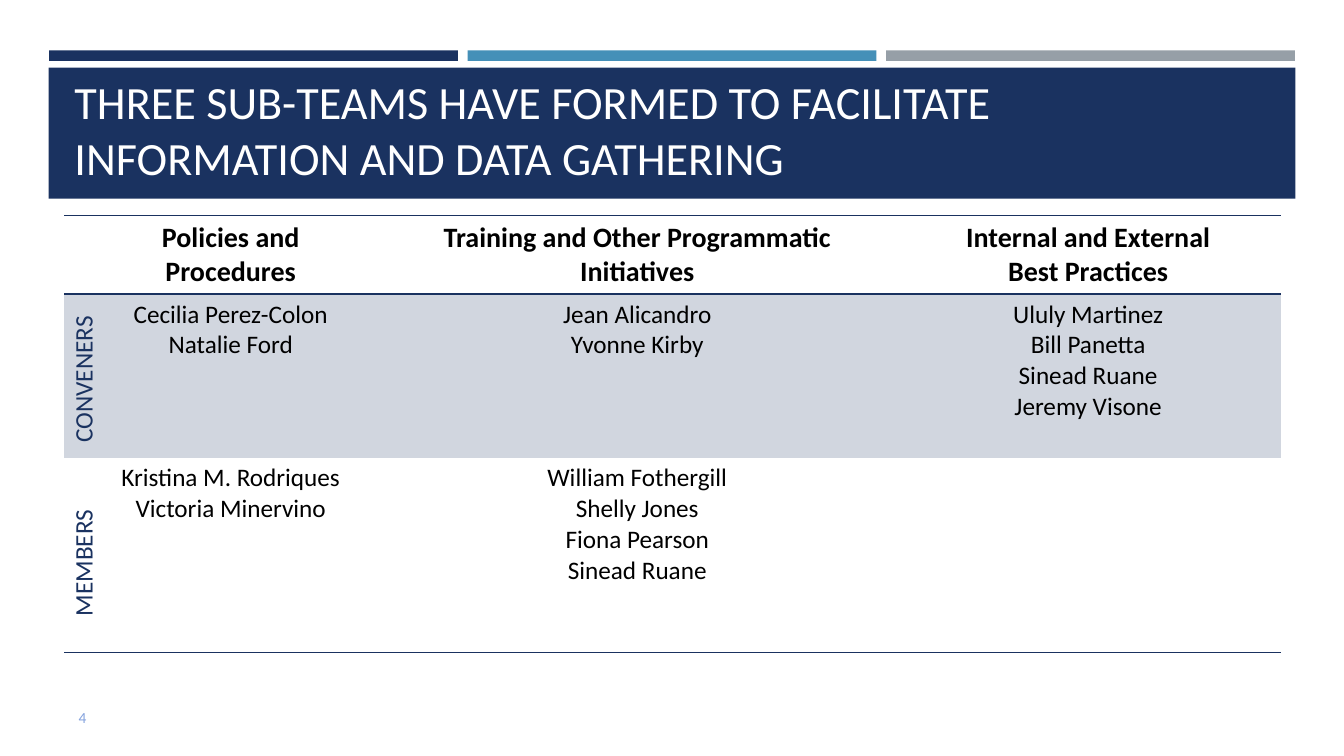
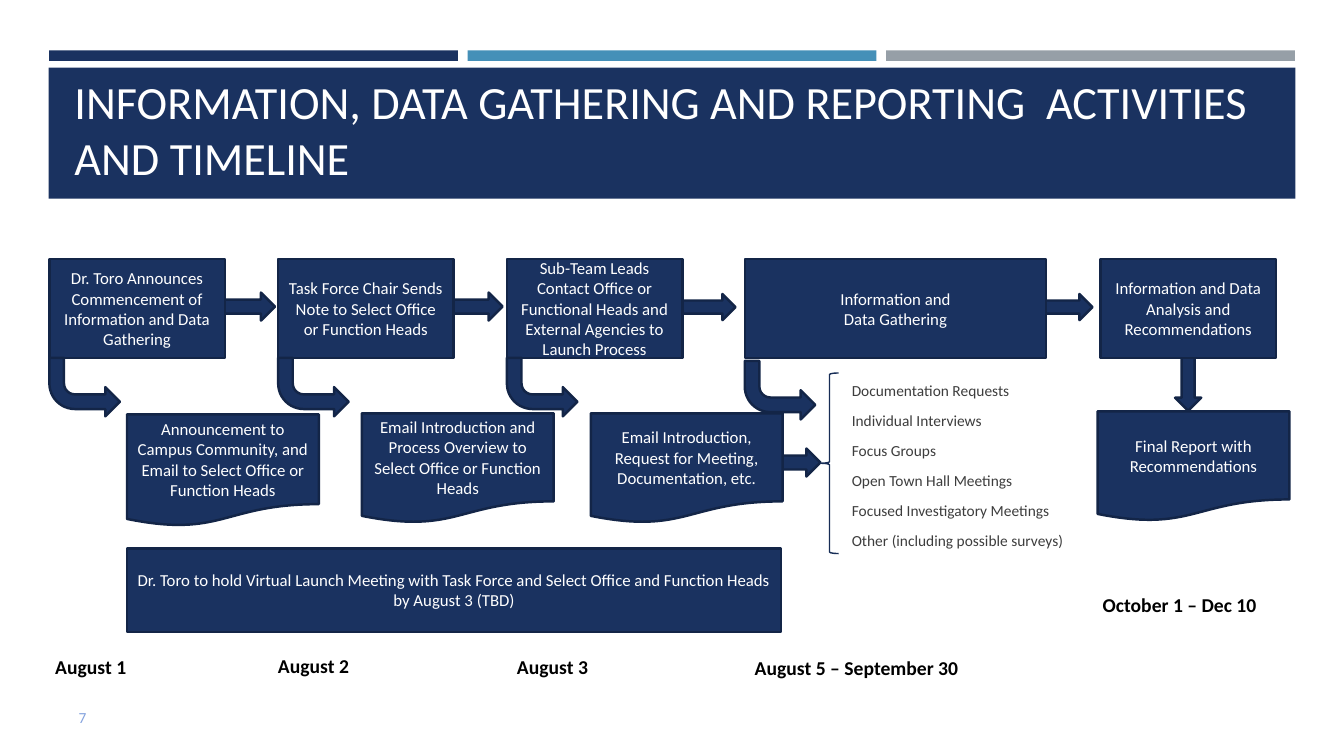
"""Build two task force slides: the sub-team table and the activity timeline."""
from dataclasses import dataclass

from lxml.etree import SubElement
from pptx import Presentation
from pptx.dml.color import RGBColor as RGB
from pptx.enum.shapes import MSO_SHAPE as SHAPE
from pptx.enum.text import MSO_ANCHOR as ANCHOR, MSO_AUTO_SIZE as FIT, PP_ALIGN as ALIGN
from pptx.oxml.ns import qn
from pptx.util import Pt


@dataclass(frozen=True)
class Theme:
    font: str = "Calibri"
    navy: str = "1A3260"
    edge: str = "132547"
    brace: str = "172D56"
    blue: str = "4590B8"
    gray: str = "969FA7"
    tint: str = "D1D6DF"
    number: str = "85A3DE"
    body: str = "3D3D3D"
    black: str = "000000"
    white: str = "FFFFFF"
    title_size: float = 33
    head_size: float = 20
    cell_size: float = 18
    date_size: float = 14
    box_size: float = 12
    small_size: float = 11


T = Theme()


def write(tf, lines, size, color, bold=False, align=ALIGN.LEFT, anchor=ANCHOR.TOP):
    tf.word_wrap = True
    tf.vertical_anchor = anchor
    for i, line in enumerate(lines):
        p = tf.paragraphs[0] if i == 0 else tf.add_paragraph()
        p.alignment = align
        r = p.add_run()
        r.text = line
        for key, value in {"name": T.font, "size": Pt(size), "bold": bold}.items():
            setattr(r.font, key, value)
        r.font.color.rgb = RGB.from_string(color)


def block(s, kind, box, fill=T.navy, line=T.edge, weight=1.75, lines=()):
    sp = s.shapes.add_shape(kind, *map(Pt, box))
    sp.shadow.inherit = False
    if fill:
        sp.fill.solid()
        sp.fill.fore_color.rgb = RGB.from_string(fill)
    else:
        sp.fill.background()
    if line:
        sp.line.color.rgb = RGB.from_string(line)
        sp.line.width = Pt(weight)
    else:
        sp.line.fill.background()
    write(sp.text_frame, lines, T.box_size, T.white, align=ALIGN.CENTER, anchor=ANCHOR.MIDDLE)
    return sp


prs = Presentation()
prs.slide_width, prs.slide_height = Pt(960), Pt(540)

pages = [
    (5, "4", "THREE SUB-TEAMS HAVE FORMED TO FACILITATE INFORMATION AND DATA GATHERING"),
    (1, "7", "INFORMATION, DATA GATHERING AND REPORTING  ACTIVITIES AND TIMELINE"),
]
for layout, number, heading in pages:
    s = prs.slides.add_slide(prs.slide_layouts[layout])
    title = s.shapes.title
    title.left, title.top, title.width, title.height = map(Pt, (46, 55.3, 868.5, 80))
    title.text_frame.auto_size = FIT.NONE
    write(title.text_frame, [heading], T.title_size, T.white, anchor=ANCHOR.BOTTOM)
    sp = s.shapes.add_textbox(*map(Pt, (49, 502, 40, 21)))
    write(sp.text_frame, [number], T.small_size, T.number)
teams, timeline = prs.slides

bands = [((35 + 299 * i, 36, 292, 7.5), color) for i, color in enumerate((T.navy, T.blue, T.gray))]
bands.append(((34.8, 48.4, 890.5, 93.6), T.navy))
for i, (box, color) in enumerate(bands):
    sp = block(teams, SHAPE.RECTANGLE, box, color, None)
    sp.element.nvSpPr.cNvPr.set("id", str(20 + i))
    prs.slide_master.shapes.element.insert(2 + i, sp.element)

rows = [
    [["Policies and", "Procedures"],
     ["Training and Other Programmatic Initiatives"],
     ["Internal and External", "Best Practices"]],
    [["Cecilia Perez-Colon", "Natalie Ford"],
     ["Jean Alicandro", "Yvonne Kirby"],
     ["Ululy Martinez", "Bill Panetta", "Sinead Ruane", "Jeremy Visone"]],
    [["Kristina M. Rodriques", "Victoria Minervino"],
     ["William Fothergill", "Shelly Jones", "Fiona Pearson", "Sinead Ruane"],
     []],
]
widths = [237.6, 21.6, 300, 34.6, 275]
heights = [56, 117, 139]
borders = [{"a:lnT": 1, "a:lnB": 1.5}, {}, {"a:lnB": 1}]
frame = teams.shapes.add_table(3, 5, *map(Pt, (46, 154, sum(widths), sum(heights))))
table = frame.table
table.first_row = table.horz_banding = False
style = table._tbl.tblPr.find(qn("a:tableStyleId"))
style.text = "{2D5ABB26-0587-4C30-8999-92F81FD0307C}"
for col, width in zip(table.columns, widths):
    col.width = Pt(width)
for i, (row, height) in enumerate(zip(table.rows, heights)):
    row.height = Pt(height)
    for j, cell in enumerate(row.cells):
        for tag, weight in borders[i].items():
            ln = SubElement(cell._tc.get_or_add_tcPr(), qn(tag), w=str(Pt(weight)))
            SubElement(SubElement(ln, qn("a:solidFill")), qn("a:srgbClr"), val=T.navy)
        if i == 1:
            cell.fill.solid()
            cell.fill.fore_color.rgb = RGB.from_string(T.tint)
        else:
            cell.fill.background()
        if j % 2 == 0:
            size = T.head_size if i == 0 else T.cell_size
            write(cell.text_frame, rows[i][j // 2], size, T.black, i == 0, ALIGN.CENTER)

for label, box in [("CONVENERS", (-0.7, 249, 119.5, 29)), ("MEMBERS", (13.7, 387.4, 90.7, 29))]:
    sp = teams.shapes.add_textbox(*map(Pt, box))
    sp.rotation = 270
    write(sp.text_frame, [label], T.cell_size, T.navy)

short, long = (38, 20), (45.4, 18.7)
arrows = [
    (158.4, 209, short, 0), (321, 209, short, 0), (480, 210, long, 0),
    (735, 210, long, 0), (548, 320.4, short, 0), (826, 261.4, long, 90),
]
for x, y, extent, angle in arrows:
    block(timeline, SHAPE.RIGHT_ARROW, (x, y, *extent)).rotation = angle

step_x = [35.3 + 163.4 * i for i in range(3)] + [532, 786.2]
steps = [
    ["Dr. Toro Announces Commencement of Information and Data Gathering"],
    ["Task Force Chair Sends Note to Select Office or Function Heads"],
    ["Sub-Team Leads Contact Office or Functional Heads and External Agencies to Launch Process"],
    ["Information and", "Data Gathering"],
    ["Information and Data Analysis and Recommendations"],
]
for x, lines in zip(step_x, steps):
    width = 215.3 if x == 532 else 125.3
    block(timeline, SHAPE.FLOWCHART_PROCESS, (x, 185, width, 70.6), lines=lines)

documents = [
    (90.7, 296, 80, "Announcement to Campus Community, and Email to Select Office or Function Heads"),
    (258.5, 295.2, 78.5, "Email Introduction and Process Overview to Select Office or Function Heads"),
    (422, 295.2, 78.5, "Email Introduction, Request for Meeting, Documentation, etc."),
    (784, 293.8, 78.5, "Final Report with Recommendations"),
]
for x, y, height, text in documents:
    block(timeline, SHAPE.FLOWCHART_DOCUMENT, (x, y, 137, height), lines=[text])

for x, y in zip(step_x, (255.6, 255.6, 255.6, 257.8)):
    sp = block(timeline, SHAPE.BENT_ARROW, (x, y, 50.4, 41.8))
    sp.element.spPr.find(qn("a:xfrm")).set("flipV", "1")

block(timeline, SHAPE.LEFT_BRACE, (586, 266.4, 13, 129), None, T.brace, 1)
block(timeline, SHAPE.RECTANGLE, (90.7, 391.7, 467.3, 59.8), lines=[
    "Dr. Toro to hold Virtual Launch Meeting with Task Force and Select Office"
    " and Function Heads by August 3 (TBD)"])

body = timeline.placeholders[1]
body.left, body.top, body.width, body.height = map(Pt, (601.2, 265, 261.4, 135.4))
body.text_frame.auto_size = FIT.NONE
write(body.text_frame, [
    "Documentation Requests", "Individual Interviews", "Focus Groups", "Open Town Hall Meetings",
    "Focused Investigatory Meetings", "Other (including possible surveys)",
], T.small_size, T.body, anchor=ANCHOR.MIDDLE)
for p in body.text_frame.paragraphs:
    p.space_before, p.space_after = Pt(2.2), Pt(6)
    pPr = p._p.get_or_add_pPr()
    pPr.set("marL", "0")
    pPr.set("indent", "0")
    SubElement(pPr, qn("a:buNone"))

dates = [
    (32.4, 464.4, "August 1"), (191.5, 463.4, "August 2"), (362.2, 464.4, "August 3"),
    (532, 464.8, "August 5 – September 30"), (780.5, 419.8, "October 1 – Dec 10"),
]
for x, y, text in dates:
    sp = timeline.shapes.add_textbox(*map(Pt, (x, y, 175, 24.5)))
    write(sp.text_frame, [text], T.date_size, T.black, True)

prs.save("out.pptx")
